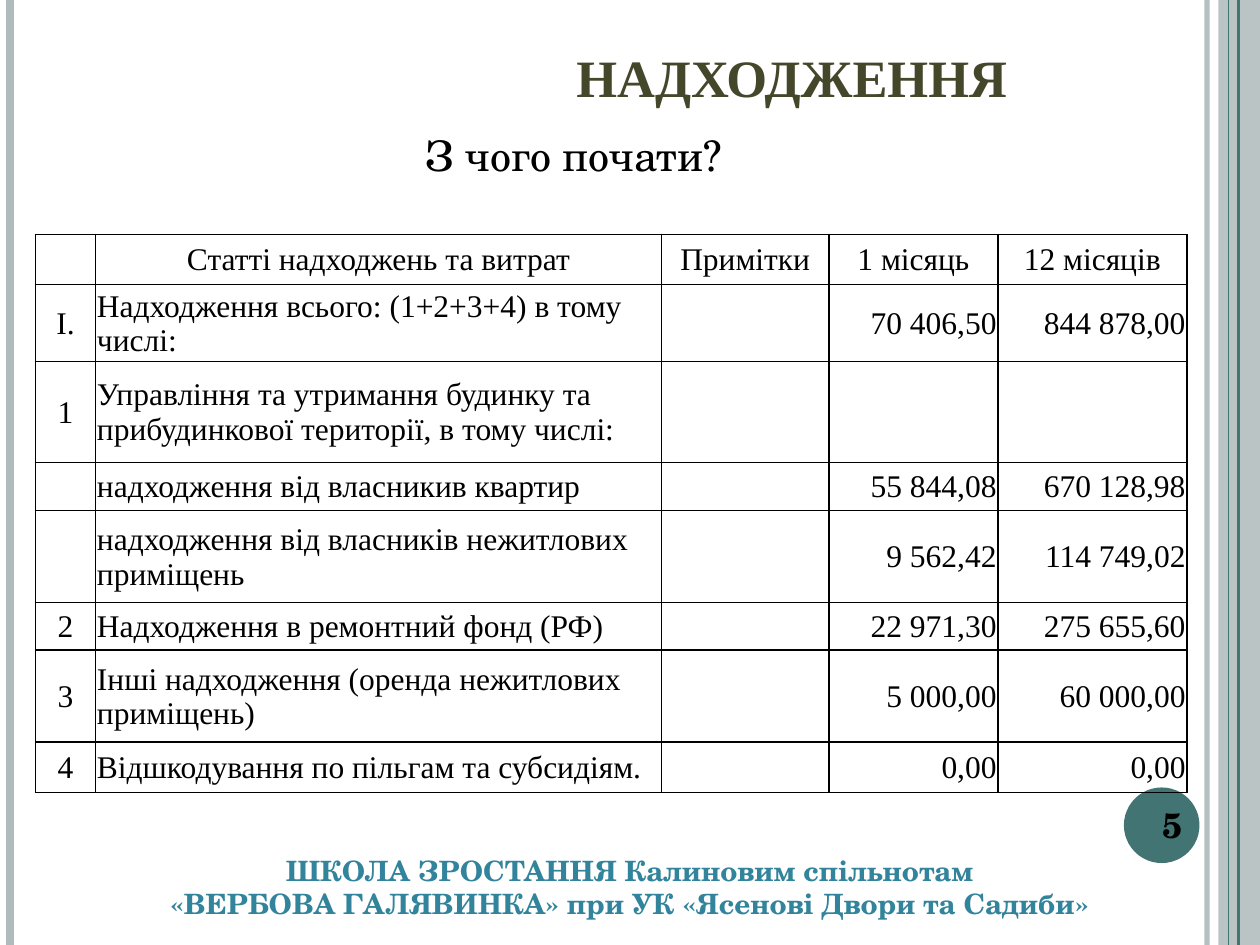
from lxml import etree
from pptx import Presentation
from pptx.dml.color import RGBColor
from pptx.enum.shapes import MSO_CONNECTOR, MSO_SHAPE
from pptx.enum.text import MSO_ANCHOR as ANCHOR, PP_ALIGN as ALIGN
from pptx.oxml.ns import qn
from pptx.util import Inches, Pt

SERIF, SCHOOL = "Times New Roman", "TeX Gyre Schola"
GREY, TEAL, BLACK = "B0BCBC", "417473", "000000"

# Content
TITLE = "НАДХОДЖЕННЯ"
QUESTION = "З чого почати?"
FOOTER = ("ШКОЛА ЗРОСТАННЯ Калиновим спільнотам\n"
          "«ВЕРБОВА ГАЛЯВИНКА» при УК «Ясенові Двори та Садиби»")
NUMBER = "5"
ROWS = [
    ("", "Статті надходжень та витрат", "Примітки", "1 місяць", "12 місяців"),
    ("І.", "Надходження всього: (1+2+3+4) в тому числі:", "", "70 406,50", "844 878,00"),
    ("1", "Управління та утримання будинку та прибудинкової території, в тому числі:",
     "", "", ""),
    ("", "надходження від власникив квартир", "", "55 844,08", "670 128,98"),
    ("", "надходження від власників нежитлових приміщень", "", "9 562,42", "114 749,02"),
    ("2", "Надходження в ремонтний фонд (РФ)", "", "22 971,30", "275 655,60"),
    ("3", "Інші надходження (оренда нежитлових приміщень)", "", "5 000,00", "60 000,00"),
    ("4", "Відшкодування по пільгам та субсидіям.", "", "0,00", "0,00"),
]
COL_WIDTHS = [0.48, 4.49, 1.33, 1.34, 1.5]
ROW_HEIGHTS = [0.4, 0.56, 0.8, 0.38, 0.73, 0.38, 0.73, 0.4]
COL_ALIGN = [ALIGN.CENTER, ALIGN.LEFT, ALIGN.CENTER, ALIGN.RIGHT, ALIGN.RIGHT]
# x, colour, width in points, opacity in percent
STRIPES = [(9.58, GREY, 3, 93), (0.08, GREY, 4.5, 100),
           (9.83, TEAL, 1.5, 100), (9.75, TEAL, 0.75, 100)]


def rgb(code):
    return RGBColor.from_string(code)


def set_opacity(shape, percent):
    color = next(shape._element.spPr.iter(qn("a:srgbClr")))
    etree.SubElement(color, qn("a:alpha"), val=str(percent * 1000))


def write(tf, text, size, font, color, align, bold=False, anchor=ANCHOR.MIDDLE):
    tf.text = text
    tf.word_wrap = True
    tf.vertical_anchor = anchor
    for p in tf.paragraphs:
        p.alignment = align
        for r in p.runs:
            r.font.size, r.font.name, r.font.bold = Pt(size), font, bold
            r.font.color.rgb = rgb(color)


def add_text(box, *style, **options):
    tb = s.shapes.add_textbox(*map(Inches, box))
    write(tb.text_frame, *style, **options)


def add_stripe(x, color, width, opacity):
    line = s.shapes.add_connector(MSO_CONNECTOR.STRAIGHT, Inches(x), 0,
                                  Inches(x), prs.slide_height)
    line.line.color.rgb, line.line.width = rgb(color), Pt(width)
    etree.SubElement(line._element.spPr, qn("a:effectLst"))
    if opacity < 100:
        set_opacity(line, opacity)


def add_filled(kind, box, color):
    sp = s.shapes.add_shape(kind, *map(Inches, box))
    sp.shadow.inherit = False
    sp.fill.solid()
    sp.fill.fore_color.rgb = rgb(color)
    sp.line.fill.background()
    return sp


def add_borders(cell):
    tc_pr = cell._tc.get_or_add_tcPr()
    for i, side in enumerate(("lnL", "lnR", "lnT", "lnB")):
        ln = etree.Element(qn(f"a:{side}"), w=str(Pt(1)))
        fill = etree.SubElement(ln, qn("a:solidFill"))
        etree.SubElement(fill, qn("a:srgbClr"), val=BLACK)
        tc_pr.insert(i, ln)


prs = Presentation()
prs.slide_width, prs.slide_height = Inches(10), Inches(7.5)
s = prs.slides.add_slide(prs.slide_layouts[5])

# Side decoration
band = add_filled(MSO_SHAPE.RECTANGLE, (9.67, 0, 0.33, 7.5), GREY)
set_opacity(band, 87)
for stripe in STRIPES:
    add_stripe(*stripe)
add_filled(MSO_SHAPE.OVAL, (8.92, 6.25, 0.6, 0.6), TEAL)

# Title, pushed right by its inner margin
title = s.shapes.title
title.left, title.top, title.width, title.height = map(Inches, (0.5, 0.3, 8.17, 0.61))
write(title.text_frame, TITLE, 30, SERIF, "45472B", ALIGN.CENTER, bold=True,
      anchor=ANCHOR.BOTTOM)
title.text_frame.margin_left = Inches(3.5)

# Question, footer and slide number
add_text((3.28, 0.98, 2.6, 0.5), QUESTION, 24, SCHOOL, BLACK, ALIGN.LEFT,
         anchor=ANCHOR.TOP)
add_text((0.83, 6.79, 8.34, 0.5), FOOTER, 16, SCHOOL, "31849B", ALIGN.CENTER, bold=True)
add_text((9.01, 6.35, 0.6, 0.39), NUMBER, 20, SCHOOL, BLACK, ALIGN.CENTER, bold=True)

# Income table
table = s.shapes.add_table(len(ROWS), len(COL_WIDTHS), Inches(0.28), Inches(1.86),
                           Inches(sum(COL_WIDTHS)), Inches(sum(ROW_HEIGHTS))).table
for column, width in zip(table.columns, COL_WIDTHS):
    column.width = Inches(width)
for row, height in zip(table.rows, ROW_HEIGHTS):
    row.height = Inches(height)
for i, values in enumerate(ROWS):
    for j, value in enumerate(values):
        cell = table.cell(i, j)
        cell.fill.background()
        cell.margin_left = cell.margin_right = cell.margin_top = Inches(0.01)
        cell.margin_bottom = 0
        cell.vertical_anchor = ANCHOR.MIDDLE
        add_borders(cell)
        if value:
            align = COL_ALIGN[j] if i else ALIGN.CENTER
            cell.text = value
            p = cell.text_frame.paragraphs[0]
            p.alignment = align
            font = p.runs[0].font
            font.size, font.name, font.bold = Pt(18), SERIF, False
            font.color.rgb = rgb(BLACK)

prs.save("out.pptx")
